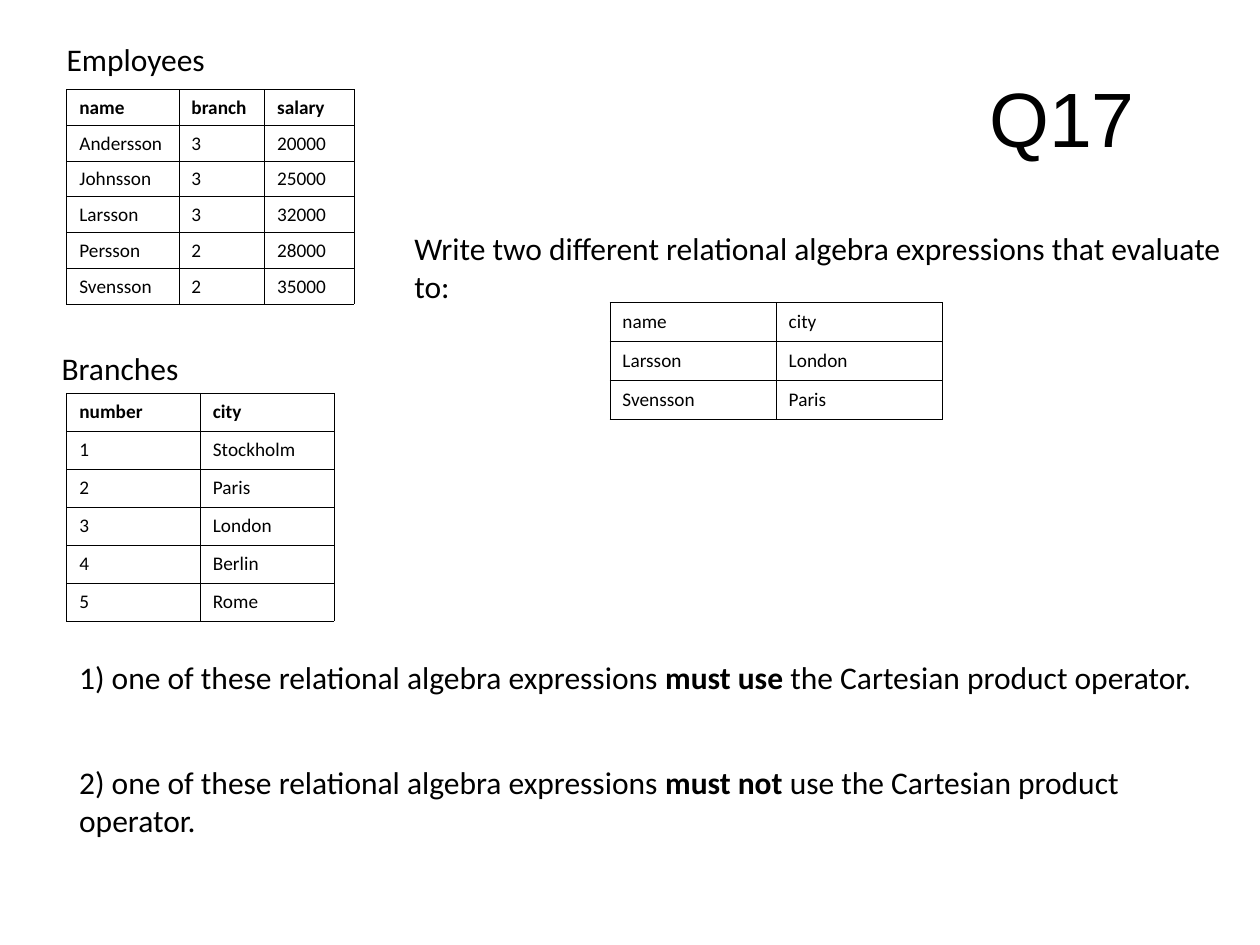
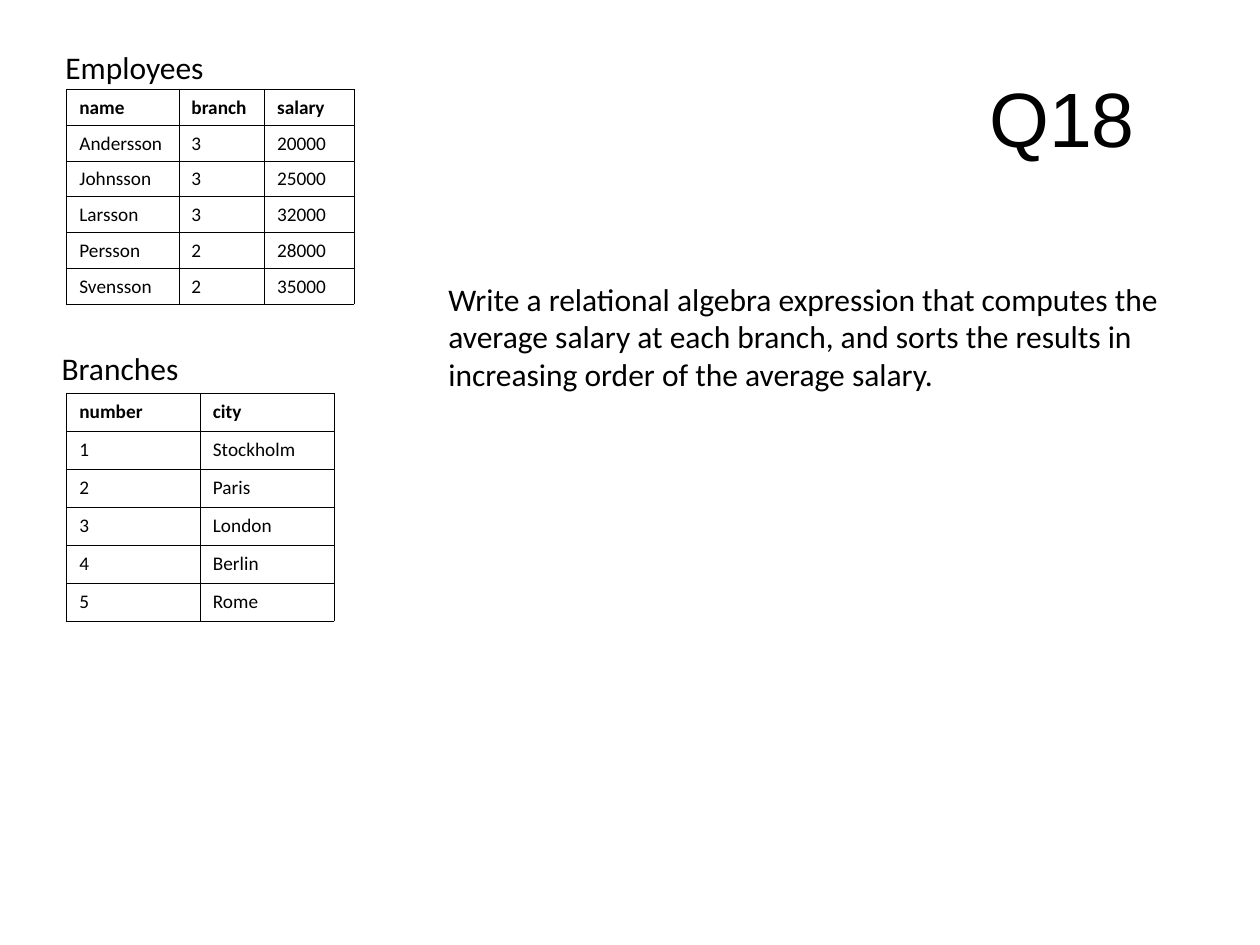
from lxml.etree import SubElement as Sub
from pptx import Presentation
from pptx.dml.color import RGBColor
from pptx.enum.text import MSO_ANCHOR as Anchor, MSO_AUTO_SIZE as Fit, PP_ALIGN as Align
from pptx.oxml.ns import qn
from pptx.util import Inches, Pt

BLACK = RGBColor(0x00, 0x00, 0x00)
WHITE = RGBColor(0xFF, 0xFF, 0xFF)
HEAD, BODY = "Arial", "Calibri"

STAFF = [
    ("name", "branch", "salary"),
    ("Andersson", "3", "20000"),
    ("Johnsson", "3", "25000"),
    ("Larsson", "3", "32000"),
    ("Persson", "2", "28000"),
    ("Svensson", "2", "35000"),
]
SITES = [
    ("number", "city"),
    ("1", "Stockholm"),
    ("2", "Paris"),
    ("3", "London"),
    ("4", "Berlin"),
    ("5", "Rome"),
]
RESULT = [("name", "city"), ("Larsson", "London"), ("Svensson", "Paris")]


def write(frame, text, font=BODY, size=18, color=BLACK, bold=False, align=Align.LEFT):
    """Fill a frame; the parts between asterisks switch to bold."""
    para = frame.paragraphs[0]
    para.alignment = align
    for i, part in enumerate(text.split("*")):
        run = para.add_run()
        run.text = part
        run.font.name = font
        run.font.size = Pt(size)
        run.font.color.rgb = color
        run.font.bold = bold or i % 2 == 1


def border(cell, width=0.4):
    props = cell._tc.get_or_add_tcPr()
    for i, side in enumerate(("lnL", "lnR", "lnT", "lnB")):
        line = props.makeelement(qn("a:" + side), {"w": str(Pt(width))})
        fill = Sub(line, qn("a:solidFill"))
        Sub(fill, qn("a:srgbClr"), val=str(BLACK))
        props.insert(i, line)


class Deck:
    def __init__(self):
        self.prs = Presentation()
        self.prs.slide_width = Inches(10)
        self.prs.slide_height = Inches(7.5)
        self.slide = None

    def start(self, title):
        self.slide = self.prs.slides.add_slide(self.prs.slide_layouts[5])
        fill = self.slide.background.fill
        fill.solid()
        fill.fore_color.rgb = WHITE
        shape = self.slide.shapes.title
        shape.left, shape.top = Inches(7.36), Inches(0.3)
        shape.width, shape.height = Inches(2.14), Inches(1.25)
        shape.text_frame.vertical_anchor = Anchor.MIDDLE
        write(shape.text_frame, title, font=HEAD, size=44, align=Align.CENTER)

    def text(self, text, x, y, w, h=0.4, wrap=True):
        box = self.slide.shapes.add_textbox(Inches(x), Inches(y), Inches(w), Inches(h))
        box.text_frame.word_wrap = wrap
        box.text_frame.auto_size = Fit.SHAPE_TO_FIT_TEXT
        write(box.text_frame, text)

    def table(self, rows, x, y, cols, h, header=True):
        size = Inches(x), Inches(y), Inches(sum(cols)), Inches(h)
        grid = self.slide.shapes.add_table(len(rows), len(cols), *size).table
        grid.first_row = grid.horz_banding = False
        for col, w in zip(grid.columns, cols):
            col.width = Inches(w)
        for r, row in enumerate(rows):
            for c, value in enumerate(row):
                cell = grid.cell(r, c)
                cell.fill.background()
                cell.vertical_anchor = Anchor.MIDDLE
                border(cell)
                write(cell.text_frame, value, size=11, bold=header and r == 0)

    def data(self, x, y):
        """Place both source tables; x and y locate the first label."""
        self.text("Employees", x, y, 1.39, wrap=False)
        self.table(STAFF, 0.53, 0.71, (0.89, 0.68, 0.71), 1.7)
        self.text("Branches", 0.39, 2.72, 1.2, wrap=False)
        self.table(SITES, 0.53, 3.12, (1.06, 1.06), 1.81)


def main():
    deck = Deck()

    # Q17: two ways to the same result
    deck.start("Q17")
    deck.data(0.43, 0.27)
    deck.text("Write two different relational algebra expressions that evaluate to:",
              3.19, 1.77, 6.81)
    deck.table(RESULT, 4.84, 2.4, (1.32, 1.32), 0.93, header=False)
    rules = ("*must use *the", "*must not *use the")
    for i, rule in enumerate(rules):
        deck.text(f"{i + 1}) one of these relational algebra expressions {rule} "
                  "Cartesian product operator.", 0.53, 5.17 + 0.84 * i, 9.28)

    # Q18: grouping and sorting
    deck.start("Q18")
    deck.data(0.42, 0.33)
    deck.text("Write a relational algebra expression that computes the average salary "
              "at each branch, and sorts the results in increasing order of the "
              "average salary.", 3.46, 2.17, 6.11, 1.31)

    deck.prs.save("out.pptx")


if __name__ == "__main__":
    main()
